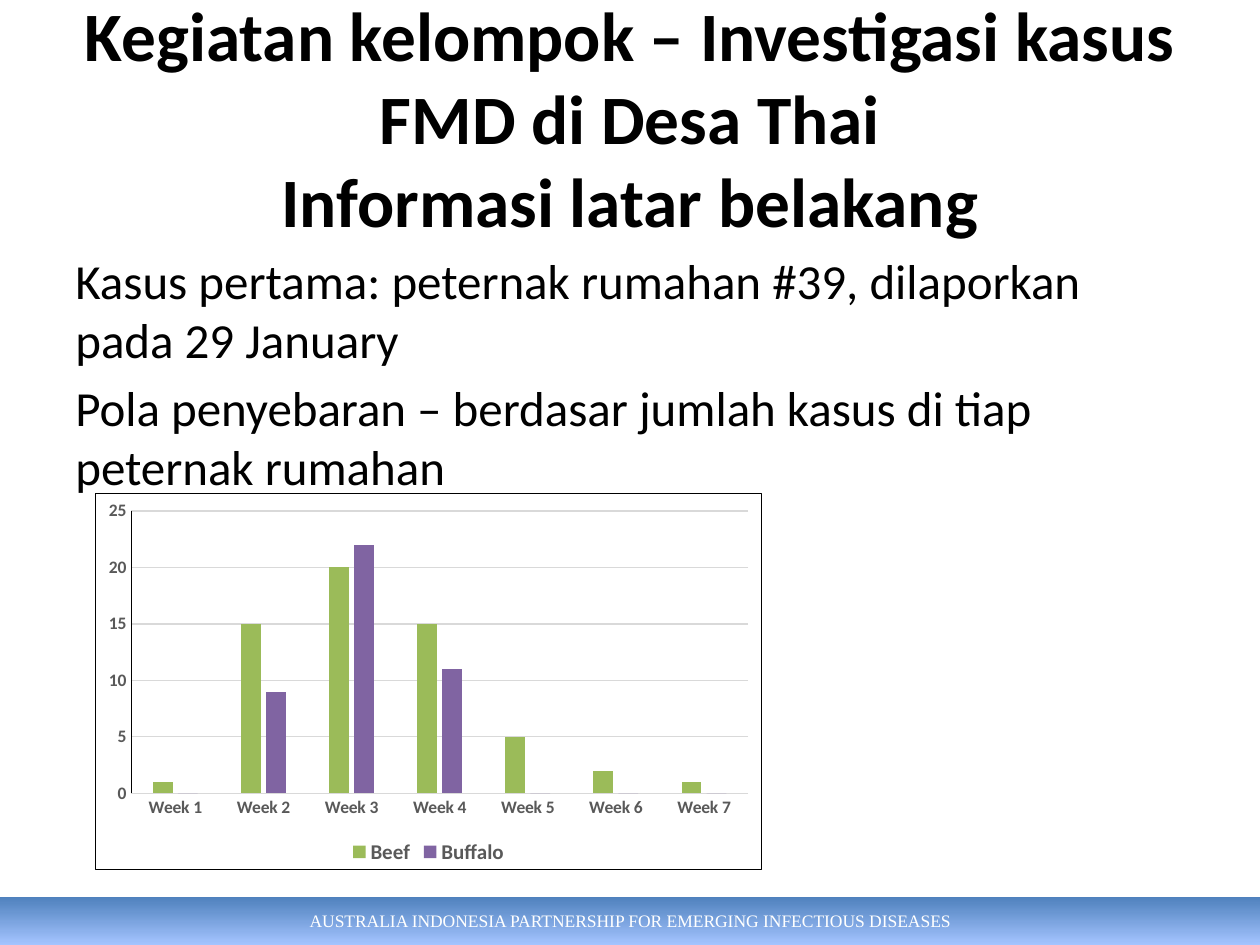
from lxml import etree
from pptx import Presentation
from pptx.chart.data import CategoryChartData
from pptx.dml.color import RGBColor
from pptx.enum.chart import XL_CHART_TYPE, XL_LEGEND_POSITION, XL_TICK_MARK
from pptx.enum.shapes import MSO_SHAPE
from pptx.enum.text import MSO_ANCHOR, PP_ALIGN
from pptx.util import Pt

PX = 914400 / 126
CENTER, LEFT = PP_ALIGN.CENTER, PP_ALIGN.LEFT
MIDDLE, TOP = MSO_ANCHOR.MIDDLE, MSO_ANCHOR.TOP
NO_TICK = XL_TICK_MARK.NONE
BLACK, WHITE, GRAY, PALE_GRAY = "000000", "FFFFFF", "595959", "D9D9D9"


def px(*lengths):
    return [round(length * PX) for length in lengths]


def write(shape, paragraphs, size, font="Calibri", color=BLACK, bold=False,
          align=LEFT, anchor=TOP, space_before=0):
    frame = shape.text_frame
    frame.word_wrap = True
    frame.vertical_anchor = anchor
    for index, text in enumerate(paragraphs):
        paragraph = frame.add_paragraph() if index else frame.paragraphs[0]
        paragraph.text = text
        paragraph.alignment = align
        if index:
            paragraph.space_before = Pt(space_before)
        paragraph.font.name = font
        paragraph.font.size = Pt(size)
        paragraph.font.bold = bold
        paragraph.font.color.rgb = RGBColor.from_string(color)


presentation = Presentation()
presentation.slide_width, presentation.slide_height = px(1260, 945)
slide = presentation.slides.add_slide(presentation.slide_layouts[6])

# Footer band
footer = slide.shapes.add_shape(MSO_SHAPE.RECTANGLE, *px(0, 897, 1260, 48))
footer.shadow.inherit = False
footer.line.fill.background()
footer.fill.gradient()
footer.fill.gradient_angle = 270
for stop, color in zip(footer.fill.gradient_stops, ("4F81BD", "A4C4FF")):
    stop.color.rgb = RGBColor.from_string(color)
write(footer, ["AUSTRALIA INDONESIA PARTNERSHIP FOR EMERGING INFECTIOUS DISEASES"],
      size=10, font="Times New Roman", color=WHITE, align=CENTER, anchor=MIDDLE)

# Title and body
title = slide.shapes.add_textbox(*px(63, 38, 1134, 158))
write(title, ["Kegiatan kelompok – Investigasi kasus FMD di Desa Thai\v"
              "Informasi latar belakang"],
      size=39.6, bold=True, align=CENTER, anchor=MIDDLE)

body = slide.shapes.add_textbox(*px(63, 244, 1134, 600))
write(body, ["Kasus pertama: peternak rumahan #39, dilaporkan pada 29 January",
             "Pola penyebaran – berdasar jumlah kasus di tiap peternak rumahan"],
      size=28, space_before=5.6)

# Weekly cases chart
data = CategoryChartData()
data.categories = [f"Week {week}" for week in range(1, 8)]
data.add_series("Beef", (1, 15, 20, 15, 5, 2, 1))
data.add_series("Buffalo", (0, 9, 22, 11, 0, 0, 0))
chart = slide.shapes.add_chart(
    XL_CHART_TYPE.COLUMN_CLUSTERED, *px(95, 493, 667, 377), data).chart
chart.has_title = False
chart.font.name = "Calibri"
chart.font.size = Pt(10)
chart.font.color.rgb = RGBColor.from_string(BLACK)

plot = chart.plots[0]
plot.gap_width = 219
plot.overlap = -27
plot.vary_by_categories = False
for series, color in zip(plot.series, ("9BBB59", "8064A2")):
    series.format.fill.solid()
    series.format.fill.fore_color.rgb = RGBColor.from_string(color)

chart.has_legend = True
chart.legend.position = XL_LEGEND_POSITION.BOTTOM
chart.legend.include_in_layout = False
category_axis, value_axis = chart.category_axis, chart.value_axis
value_axis.minimum_scale = 0
value_axis.maximum_scale = 25
value_axis.major_unit = 5
value_axis.has_major_gridlines = True

for axis in (category_axis, value_axis):
    axis.major_tick_mark = axis.minor_tick_mark = NO_TICK
for line, color in ((category_axis.format.line, PALE_GRAY),
                    (value_axis.format.line, BLACK),
                    (value_axis.major_gridlines.format.line, PALE_GRAY)):
    line.width = Pt(0.75)
    line.color.rgb = RGBColor.from_string(color)
for font, size in ((category_axis.tick_labels.font, 10),
                   (value_axis.tick_labels.font, 10),
                   (chart.legend.font, 12)):
    font.name = "Calibri"
    font.size = Pt(size)
    font.bold = True
    font.color.rgb = RGBColor.from_string(GRAY)

# Chart background and border
chart_frame = etree.fromstring(
    '<c:spPr xmlns:c="http://schemas.openxmlformats.org/drawingml/2006/chart"'
    ' xmlns:a="http://schemas.openxmlformats.org/drawingml/2006/main">'
    f'<a:solidFill><a:srgbClr val="{WHITE}"/></a:solidFill>'
    f'<a:ln w="{Pt(0.75)}"><a:solidFill><a:srgbClr val="{BLACK}"/></a:solidFill></a:ln>'
    '</c:spPr>')
chart.element.chart.addnext(chart_frame)

presentation.save("out.pptx")
